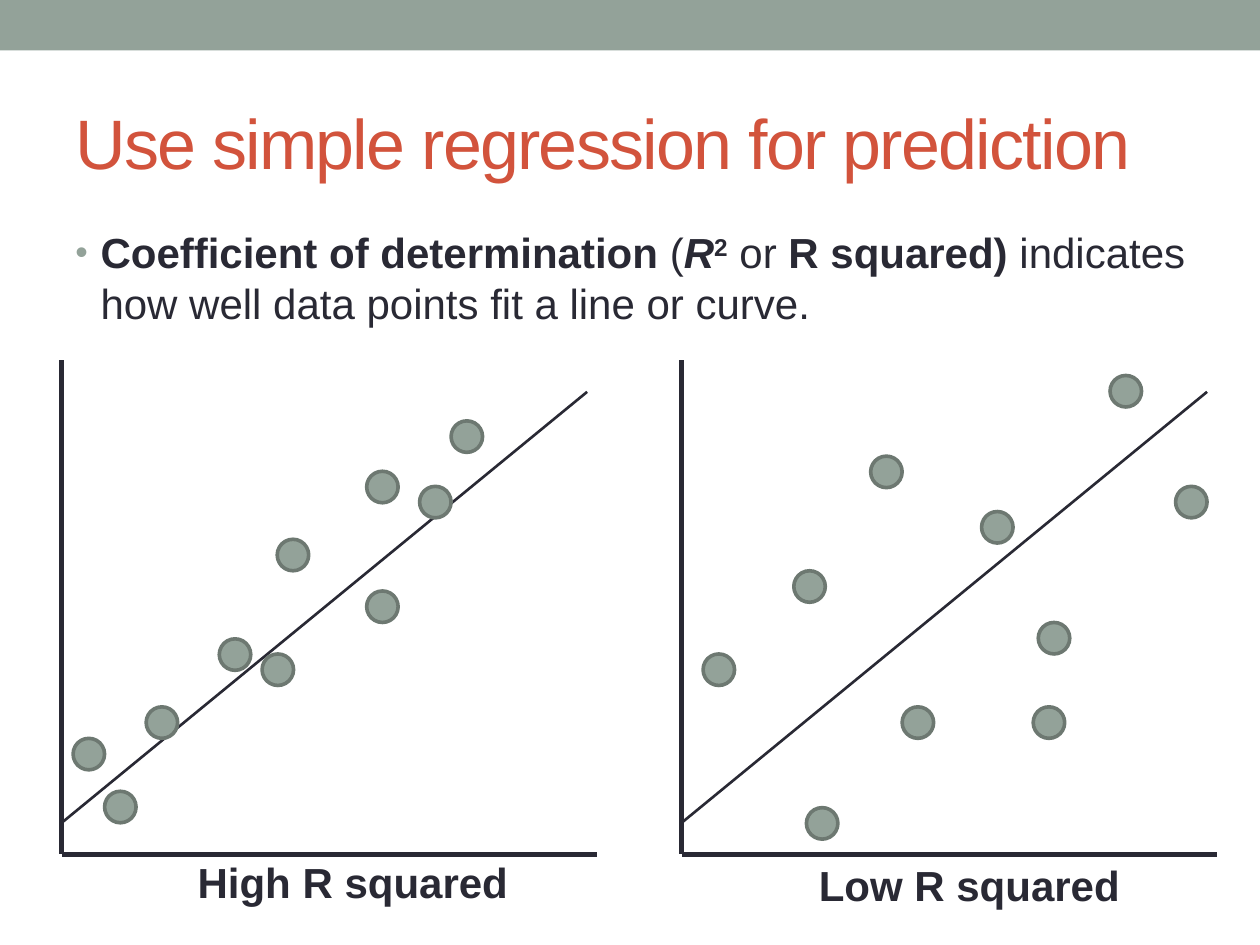
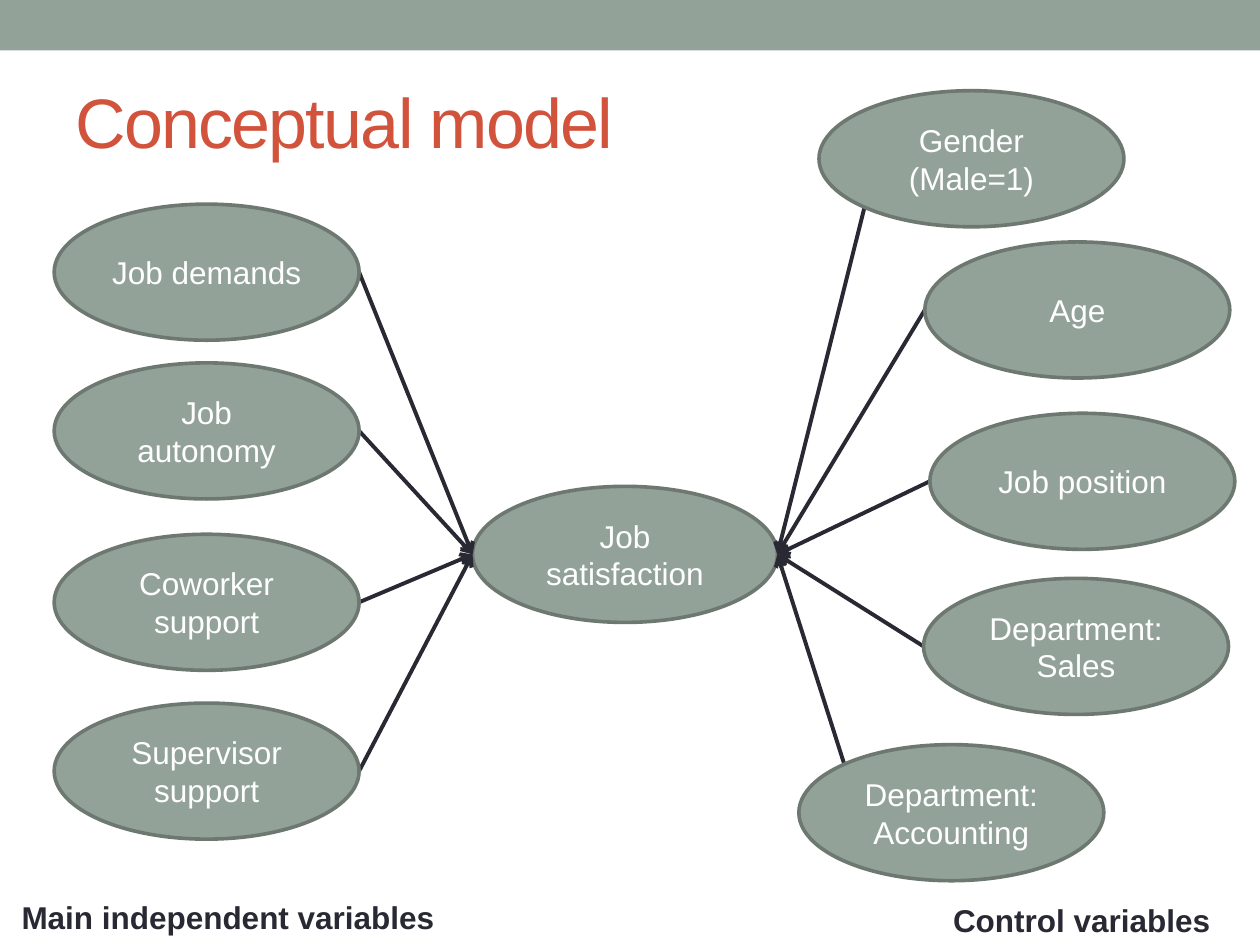
"""Build two slides on simple regression and a conceptual model."""
from dataclasses import dataclass
from typing import Any, NamedTuple

from lxml.etree import SubElement as Sub
from pptx import Presentation
from pptx.dml.color import RGBColor
from pptx.enum.shapes import MSO_CONNECTOR as Link, MSO_SHAPE as Shape
from pptx.enum.text import MSO_ANCHOR as Anchor, MSO_AUTO_SIZE as Fit, PP_ALIGN as Align
from pptx.oxml.ns import qn
from pptx.util import Inches, Pt

SAGE = RGBColor(0x93, 0xA2, 0x99)
EDGE = RGBColor(0x6D, 0x78, 0x71)
RUST = RGBColor(0xD2, 0x53, 0x3C)
INK = RGBColor(0x29, 0x29, 0x34)
WHITE = RGBColor(0xFF, 0xFF, 0xFF)
HEAD = {"size": Pt(40)}
BODY = {"size": Pt(24)}
NOTE = {"size": Pt(18)}
BOLD = {"bold": True}
DOT = 0.25
NODE_W, NODE_H = 2.42, 1.08


class Point(NamedTuple):
    """A place on the slide, or a share of a node's width and height."""
    x: float
    y: float


class Box(NamedTuple):
    """A frame in inches."""
    x: float
    y: float
    w: float
    h: float


class Piece(NamedTuple):
    """A run of text with its own format."""
    text: str
    form: dict[str, Any]
    base: int = 0


@dataclass
class Plot:
    """A scatter sketch with axes, fit line and label."""
    left: float
    label: str
    frame: Box
    dots: list[tuple[float, float]]


@dataclass
class Node:
    """An oval that points at the hub from one port."""
    text: str
    x: float
    y: float
    port: Point


LEFT, RIGHT = Point(0, 0.5), Point(1, 0.5)
LOW, HIGH = Point(0.15, 0.85), Point(0.15, 0.15)
HUB = Node("Job satisfaction", 3.75, 3.86, LEFT)

PLOTS = [
    Plot(0.49, "High R squared", Box(1.47, 6.75, 2.69, 0.5), [
        (3.58, 3.34), (3.33, 3.86), (2.91, 3.74), (2.91, 4.69), (1.16, 5.61),
        (2.08, 5.19), (1.74, 5.07), (2.2, 4.28), (0.83, 6.28), (0.58, 5.86)]),
    Plot(5.41, "Low R squared", Box(6.4, 6.77, 2.61, 0.5), [
        (8.81, 2.98), (6.91, 3.62), (6.3, 4.53), (6.4, 6.41), (5.58, 5.19),
        (8.24, 4.94), (9.33, 3.86), (8.2, 5.61), (7.79, 4.06), (7.16, 5.61)]),
]

CAUSES = [
    Node("Job demands", 0.43, 1.62, RIGHT),
    Node("Job autonomy", 0.43, 2.88, RIGHT),
    Node("Coworker support", 0.43, 4.24, RIGHT),
    Node("Supervisor support", 0.43, 5.58, RIGHT),
]

CONTROLS = [
    Node("Gender\n(Male=1)", 6.5, 0.72, LOW),
    Node("Age", 7.34, 1.92, LEFT),
    Node("Job position", 7.38, 3.28, LEFT),
    Node("Department: Sales", 7.33, 4.59, LEFT),
    Node("Department: Accounting", 6.34, 5.91, HIGH),
]

CLAIM = [
    Piece("Coefficient of determination ", BOLD),
    Piece("(", {}),
    Piece("R", {"bold": True, "italic": True}),
    Piece("2", BOLD, 30000),
    Piece(" or ", {}),
    Piece("R squared)", BOLD),
    Piece(" indicates how well data points fit a line or curve.", {}),
]


def apply(item: Any, form: dict[str, Any]) -> None:
    """Set each format value on the item."""
    for key, value in form.items():
        setattr(item, key, value)


def paint(font: Any, hue: RGBColor, form: dict[str, Any]) -> None:
    """Give a font its face, colour and format."""
    apply(font, {"name": "Arial", **form})
    font.color.rgb = hue


def span(box: Box) -> list[Inches]:
    """Turn a frame into lengths."""
    return [Inches(side) for side in box]


def write(slide: Any, text: str, box: Box, hue: RGBColor, form: dict[str, Any],
          frame: dict[str, Any], align: Align = Align.LEFT) -> Any:
    """Add a text box with one paragraph and return its run."""
    body = slide.shapes.add_textbox(*span(box)).text_frame
    apply(body, {"word_wrap": True, **frame})
    par = body.paragraphs[0]
    par.alignment = align
    run = par.add_run()
    run.text = text
    paint(run.font, hue, form)
    return run


def draw(slide: Any, kind: Shape, box: Box, edged: bool = True) -> Any:
    """Add a sage shape, edged or plain."""
    shape = slide.shapes.add_shape(kind, *span(box))
    shape.shadow.inherit = False
    shape.fill.solid()
    shape.fill.fore_color.rgb = SAGE
    if edged:
        shape.line.color.rgb = EDGE
        shape.line.width = Pt(2.08)
    else:
        shape.line.fill.background()
    return shape


def join(shapes: Any, start: Point, end: Point, width: float, arrow: bool = False) -> None:
    """Add a straight line, with an arrowhead at its end if asked."""
    line = shapes.add_connector(Link.STRAIGHT, *[Inches(at) for at in (*start, *end)])
    line.line.color.rgb = INK
    line.line.width = Pt(width)
    props = line._element.spPr
    if arrow:
        Sub(props.find(qn("a:ln")), qn("a:tailEnd"), type="arrow")
    Sub(props, qn("a:effectLst"))


def begin(deck: Any, title: str, top: float) -> Any:
    """Add a slide with band and title."""
    slide = deck.slides.add_slide(deck.slide_layouts[6])
    draw(slide, Shape.RECTANGLE, Box(0, 0, 10, 0.4), edged=False)
    run = write(slide, title, Box(0.5, top, 9, 1.08), RUST, HEAD,
                {"vertical_anchor": Anchor.MIDDLE})
    run.font._element.set("spc", "-100")
    return slide


def state(slide: Any) -> None:
    """Add the bullet on the fit of a line."""
    body = slide.shapes.add_textbox(*span(Box(0.5, 1.75, 9.33, 1))).text_frame
    body.word_wrap = True
    par = body.paragraphs[0]
    par.space_before = Pt(4.8)
    props = par._p.get_or_add_pPr()
    props.set("marL", str(Inches(0.2)))
    props.set("indent", str(Inches(-0.2)))
    Sub(Sub(props, qn("a:buClr")), qn("a:srgbClr"), val=str(SAGE))
    Sub(props, qn("a:buSzPct"), val="85000")
    Sub(props, qn("a:buFont"), typeface="Arial")
    Sub(props, qn("a:buChar"), char="•")
    for piece in CLAIM:
        run = par.add_run()
        run.text = piece.text
        paint(run.font, INK, {**BODY, **piece.form})
        if piece.base:
            run.font._element.set("baseline", str(piece.base))


def chart(slide: Any, plot: Plot) -> None:
    """Draw a scatter sketch."""
    foot = Point(plot.left, 6.78)
    axes = slide.shapes.add_group_shape().shapes
    join(axes, Point(plot.left, 2.86), foot, 3)
    join(axes, foot, Point(plot.left + 4.25, foot.y), 3)
    join(slide.shapes, Point(plot.left, 6.53), Point(plot.left + 4.17, 3.11), 1.5)
    for x, y in plot.dots:
        draw(slide, Shape.OVAL, Box(x, y, DOT, DOT))
    write(slide, plot.label, plot.frame, INK, {**BODY, **BOLD},
          {"word_wrap": False, "auto_size": Fit.SHAPE_TO_FIT_TEXT})


def place(node: Node, port: Point) -> Point:
    """Find a port of a node on the slide."""
    return Point(node.x + port.x * NODE_W, node.y + port.y * NODE_H)


def oval(slide: Any, node: Node) -> None:
    """Draw a node with its text."""
    body = draw(slide, Shape.OVAL, Box(node.x, node.y, NODE_W, NODE_H)).text_frame
    apply(body, {"text": node.text, "word_wrap": True, "vertical_anchor": Anchor.MIDDLE})
    for par in body.paragraphs:
        par.alignment = Align.CENTER
        paint(par.runs[0].font, WHITE, NOTE)


def model(slide: Any) -> None:
    """Draw the hub and all that points at it."""
    oval(slide, HUB)
    for nodes, side in ((CAUSES, LEFT), (CONTROLS, RIGHT)):
        for node in nodes:
            join(slide.shapes, place(node, node.port), place(HUB, side), 2.25, arrow=True)
            oval(slide, node)
    for text, box in (("Main independent variables", Box(0, 7.08, 3.62, 0.4)),
                      ("Control variables", Box(7.02, 7.1, 3.13, 0.4))):
        write(slide, text, box, INK, {**NOTE, **BOLD},
              {"auto_size": Fit.SHAPE_TO_FIT_TEXT}, Align.CENTER)


def main() -> None:
    """Build and save the deck."""
    deck = Presentation()
    apply(deck, {"slide_width": Inches(10), "slide_height": Inches(7.5)})
    slide = begin(deck, "Use simple regression for prediction", 0.58)
    state(slide)
    for plot in PLOTS:
        chart(slide, plot)
    model(begin(deck, "Conceptual model", 0.42))
    deck.save("out.pptx")


if __name__ == "__main__":
    main()
